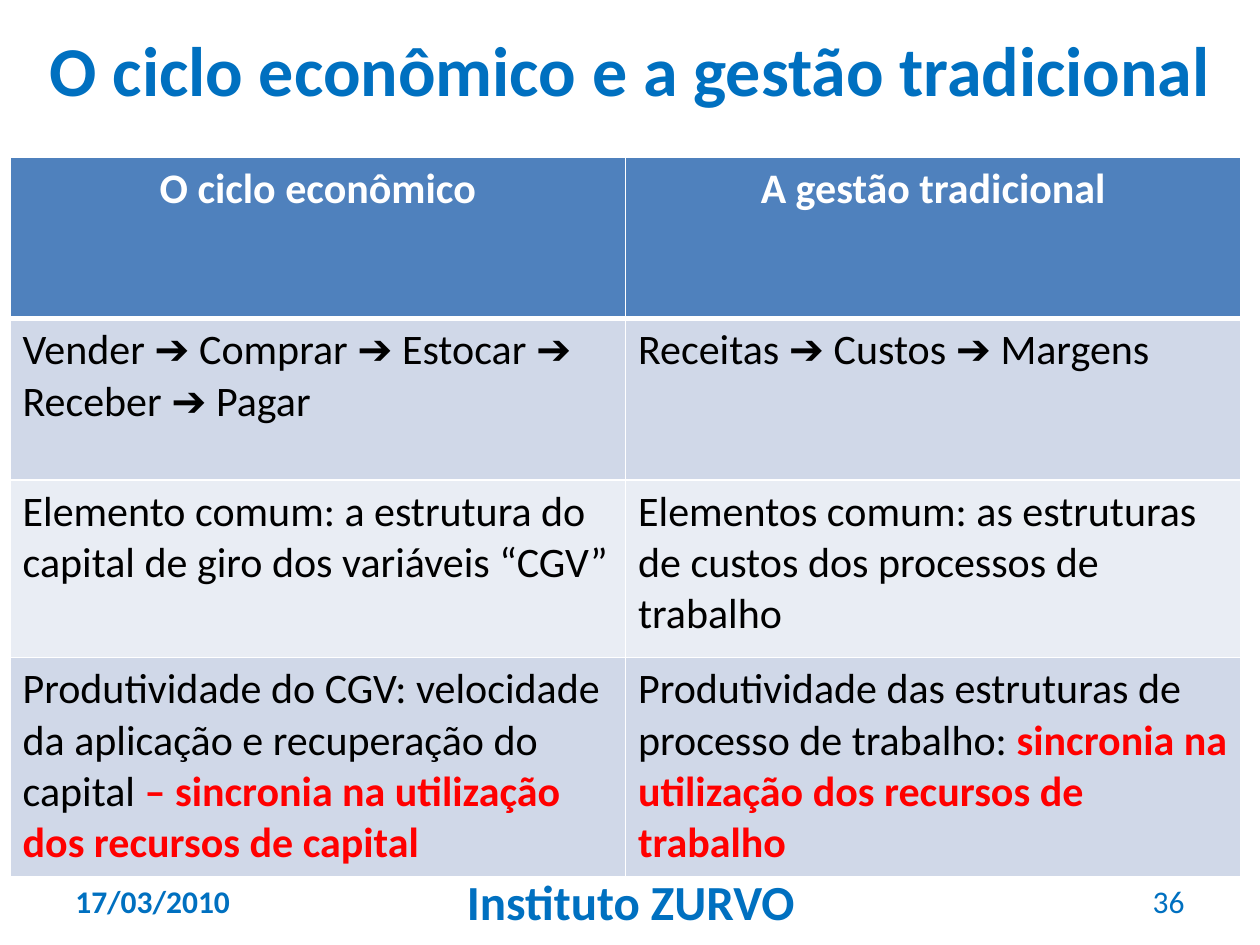
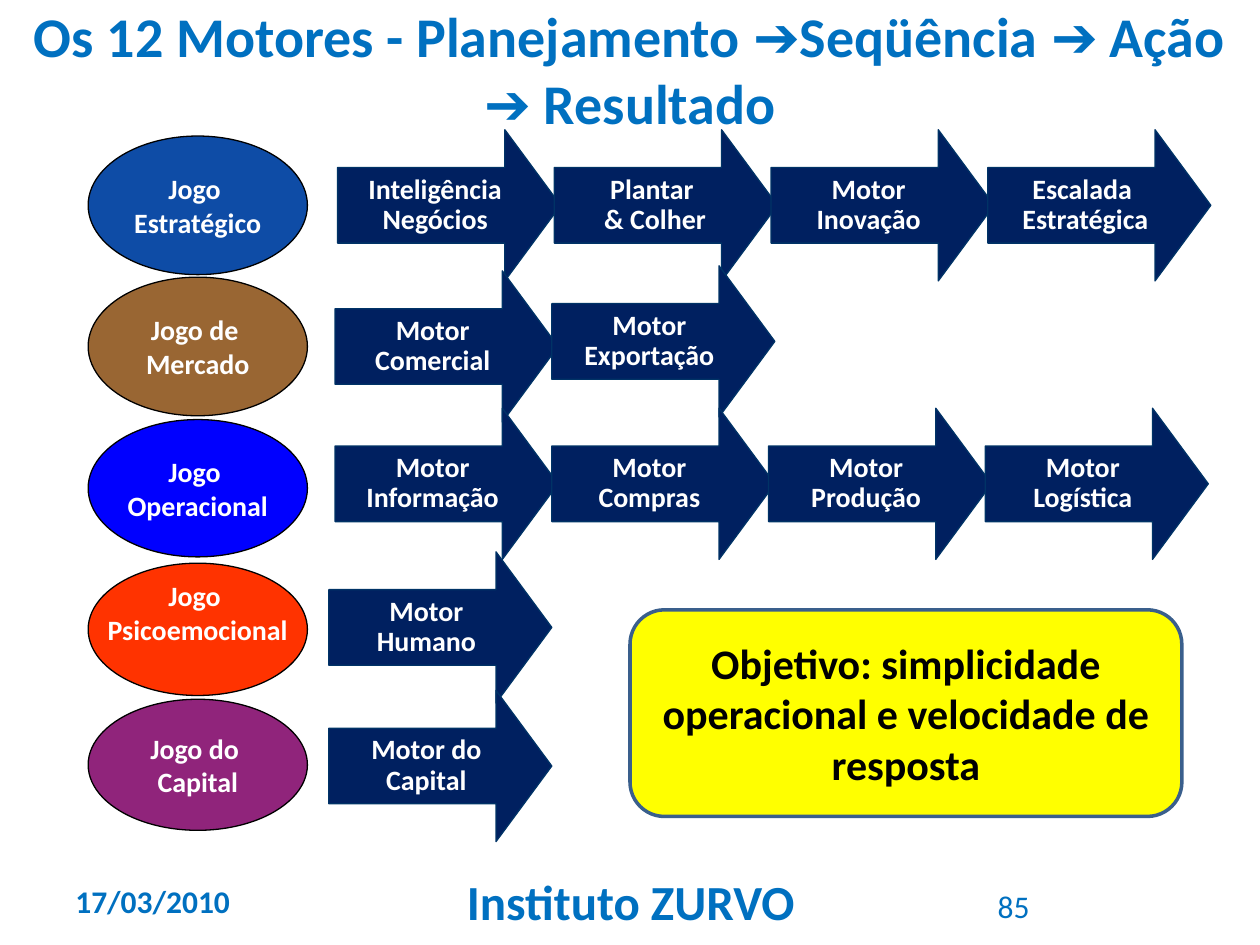
from lxml.etree import SubElement
from pptx import Presentation
from pptx.dml.color import RGBColor
from pptx.enum.shapes import MSO_SHAPE
from pptx.enum.text import MSO_ANCHOR, PP_ALIGN
from pptx.oxml import parse_xml
from pptx.oxml.ns import nsdecls, qn
from pptx.util import Inches, Pt

COLUMNS, ROWS = 100, 75
SLIDE_WIDTH, SLIDE_HEIGHT = Inches(10), Inches(7.5)
BLUE, NAVY, WHITE, BLACK, RED = "0070C0", "002060", "FFFFFF", "000000", "FF0000"
HEADER_FILL, BAND_FILLS = "4F81BD", ("D0D8E8", "E9EDF4")
LEFT, CENTER, RIGHT = PP_ALIGN.LEFT, PP_ALIGN.CENTER, PP_ALIGN.RIGHT
FONT = {"name": "Calibri", "bold": True}
MOTOR_FONT = {"size": Pt(16), "color": WHITE}
ARROW_WIDTH, ARROW_HEIGHT, ARROW_PITCH = 17.7, 12, 17.2

COMPARISON = [
    ("O ciclo econômico", "A gestão tradicional"),
    ("Vender ➔ Comprar ➔ Estocar ➔ Receber ➔ Pagar",
     "Receitas ➔ Custos ➔ Margens"),
    ("Elemento comum: a estrutura do capital de giro dos variáveis “CGV”",
     "Elementos comum: as estruturas de custos dos processos de trabalho"),
    ("Produtividade do CGV: velocidade da aplicação e recuperação do capital "
     "|– sincronia na utilização dos recursos de capital",
     "Produtividade das estruturas de processo de trabalho: "
     "|sincronia na utilização dos recursos de trabalho"),
]
ROW_HEIGHTS = (12.8, 12.8, 14.1, 17.4)

GAMES = [
    {"name": "Jogo |Estratégico", "fill": "0E4CA6", "top": 10.8, "height": 11,
     "arrows_at": (26.8, 10.3),
     "motors": ["Inteligência|Negócios", "Plantar| & Colher",
                "Motor|Inovação", "Escalada |Estratégica"]},
    {"name": "Jogo de |Mercado", "fill": "996633", "top": 22, "height": 11,
     "arrows_at": (26.6, 21.5), "step": -0.4,
     "motors": ["Motor|Comercial", "Motor|Exportação"]},
    {"name": "Jogo |Operacional", "fill": "0000FF", "top": 33.3, "height": 10.9,
     "arrows_at": (26.6, 32.4),
     "motors": ["Motor|Informação", "Motor|Compras", "Motor|Produção", "Motor|Logística"]},
    {"name": "Jogo |Psicoemocional", "fill": "FF3300", "top": 44.7, "height": 10.5,
     "arrows_at": (26.1, 43.8), "margin_bottom": Inches(0.32),
     "motors": ["Motor|Humano"]},
    {"name": "Jogo do |Capital", "fill": "90247B", "top": 55.5, "height": 10.4,
     "arrows_at": (26.1, 54.8), "motors": ["Motor do|Capital"]},
]


def rgb(value):
    """Turn a hex string into a colour."""
    return RGBColor.from_string(value)


def across(columns):
    """Length of a number of grid columns."""
    return round(SLIDE_WIDTH * columns / COLUMNS)


def down(rows):
    """Length of a number of grid rows."""
    return round(SLIDE_HEIGHT * rows / ROWS)


def place(left, top, width, height):
    """Turn a grid area into slide lengths."""
    return across(left), down(top), across(width), down(height)


def apply(target, values):
    """Set every value of a dict as an attribute."""
    for key, value in values.items():
        setattr(target, key, value)


def add_run(paragraph, words, color, **font):
    """Append a formatted run."""
    run = paragraph.add_run()
    run.text = words
    apply(run.font, FONT | font)
    run.font.color.rgb = rgb(color)


def write(frame, lines, align=CENTER, spacing=None, **font):
    """Fill a frame with one paragraph per line."""
    for index, line in enumerate(lines):
        paragraph = frame.add_paragraph() if index else frame.paragraphs[0]
        apply(paragraph, {"alignment": align, "line_spacing": spacing})
        add_run(paragraph, line, **font)


def add_label(slide, area, words, size, align=CENTER, **font):
    """Add a wrapped blue text box."""
    frame = slide.shapes.add_textbox(*place(*area)).text_frame
    apply(frame, {"word_wrap": True, "vertical_anchor": MSO_ANCHOR.MIDDLE})
    write(frame, [words], align, size=Pt(size), color=BLUE, **font)


def add_figure(slide, kind, area, fill, outline, weight=0.75, wrap=False, **frame_values):
    """Add a filled, outlined shape and return it."""
    figure = slide.shapes.add_shape(kind, *place(*area))
    figure.shadow.inherit = False
    figure.fill.solid()
    figure.fill.fore_color.rgb = rgb(fill)
    figure.line.color.rgb = rgb(outline)
    figure.line.width = Pt(weight)
    apply(figure.text_frame,
          {"word_wrap": wrap, "vertical_anchor": MSO_ANCHOR.MIDDLE} | frame_values)
    return figure


def add_motor(slide, left, top, name):
    """Add one arrow naming a motor."""
    arrow = add_figure(slide, MSO_SHAPE.RIGHT_ARROW,
                       (left, top, ARROW_WIDTH, ARROW_HEIGHT), NAVY, "003366")
    arrow.adjustments[1] = 0.369
    write(arrow.text_frame, name.split("|"), spacing=0.9, **MOTOR_FONT)


def add_game(slide, game):
    """Add a game's ellipse and its chain of motors."""
    margins = {key: game[key] for key in ("margin_bottom",) if key in game}
    ellipse = add_figure(slide, MSO_SHAPE.OVAL, (7, game["top"], 17.4, game["height"]),
                         game["fill"], BLACK, **margins)
    write(ellipse.text_frame, game["name"].split("|"), **MOTOR_FONT)
    left, top = game["arrows_at"]
    for index, motor in enumerate(game["motors"]):
        add_motor(slide, left + index * ARROW_PITCH, top + index * game.get("step", 0), motor)


def add_borders(cell, weights):
    """Draw white cell borders of the given weights."""
    properties = cell._tc.get_or_add_tcPr()
    for index, (side, weight) in enumerate(weights.items()):
        border = parse_xml(f'<a:ln{side} {nsdecls("a")} w="{Pt(weight)}"/>')
        solid = SubElement(border, qn("a:solidFill"))
        SubElement(solid, qn("a:srgbClr"), val=WHITE)
        properties.insert(index, border)


def fill_cell(cell, words, row):
    """Write and colour a header or body cell."""
    header = row == 0
    cell.fill.solid()
    cell.fill.fore_color.rgb = rgb(HEADER_FILL if header else BAND_FILLS[(row - 1) % 2])
    paragraph = cell.text_frame.paragraphs[0]
    paragraph.alignment = CENTER if header else LEFT
    plain, _, emphasis = words.partition("|")
    add_run(paragraph, plain, WHITE if header else BLACK, size=Pt(24), bold=header)
    if emphasis:
        add_run(paragraph, emphasis, RED, size=Pt(24))
    add_borders(cell, {"L": 1, "R": 1, "T": 3 if row == 1 else 1, "B": 3 if header else 1})


def add_comparison(slide, area):
    """Add the two-column comparison table."""
    table = slide.shapes.add_table(len(COMPARISON), 2, *place(*area)).table
    for row, (height, texts) in enumerate(zip(ROW_HEIGHTS, COMPARISON)):
        table.rows[row].height = down(height)
        for column, words in enumerate(texts):
            fill_cell(table.cell(row, column), words, row)


def add_page(deck, title, title_size, number, number_area):
    """Add a slide with its title, date, institute and number."""
    slide = deck.slides.add_slide(deck.slide_layouts[6])
    add_label(slide, (0, -0.8, 100, 12.5), title, title_size)
    add_label(slide, (5, 69.5, 23.3, 4), "17/03/2010", 18, LEFT)
    add_label(slide, (34.2, 69.5, 31.7, 4), "Instituto ZURVO", 28)
    add_label(slide, number_area, number, 18, RIGHT, bold=False)
    return slide


def main():
    """Build and save the deck."""
    deck = Presentation()
    apply(deck, {"slide_width": SLIDE_WIDTH, "slide_height": SLIDE_HEIGHT})

    cycle = add_page(deck, "O ciclo econômico e a gestão tradicional", 40,
                     "36", (71.7, 69.5, 23.3, 4))
    add_comparison(cycle, (0.8, 12.5, 97.7, sum(ROW_HEIGHTS)))

    motors = add_page(deck, "Os 12 Motores - Planejamento ➔Seqüência ➔ Ação ➔ Resultado", 32,
                      "85", (59.4, 69.3, 23.3, 5.2))
    for game in GAMES:
        add_game(motors, game)
    goal = add_figure(motors, MSO_SHAPE.ROUNDED_RECTANGLE, (50, 48.4, 43.8, 16.4),
                      "FFFF00", "3A5F8C", weight=2, wrap=True)
    write(goal.text_frame, ["Objetivo: simplicidade operacional e velocidade de resposta"],
          size=Pt(24), color=BLACK)

    deck.save("out.pptx")


if __name__ == "__main__":
    main()
